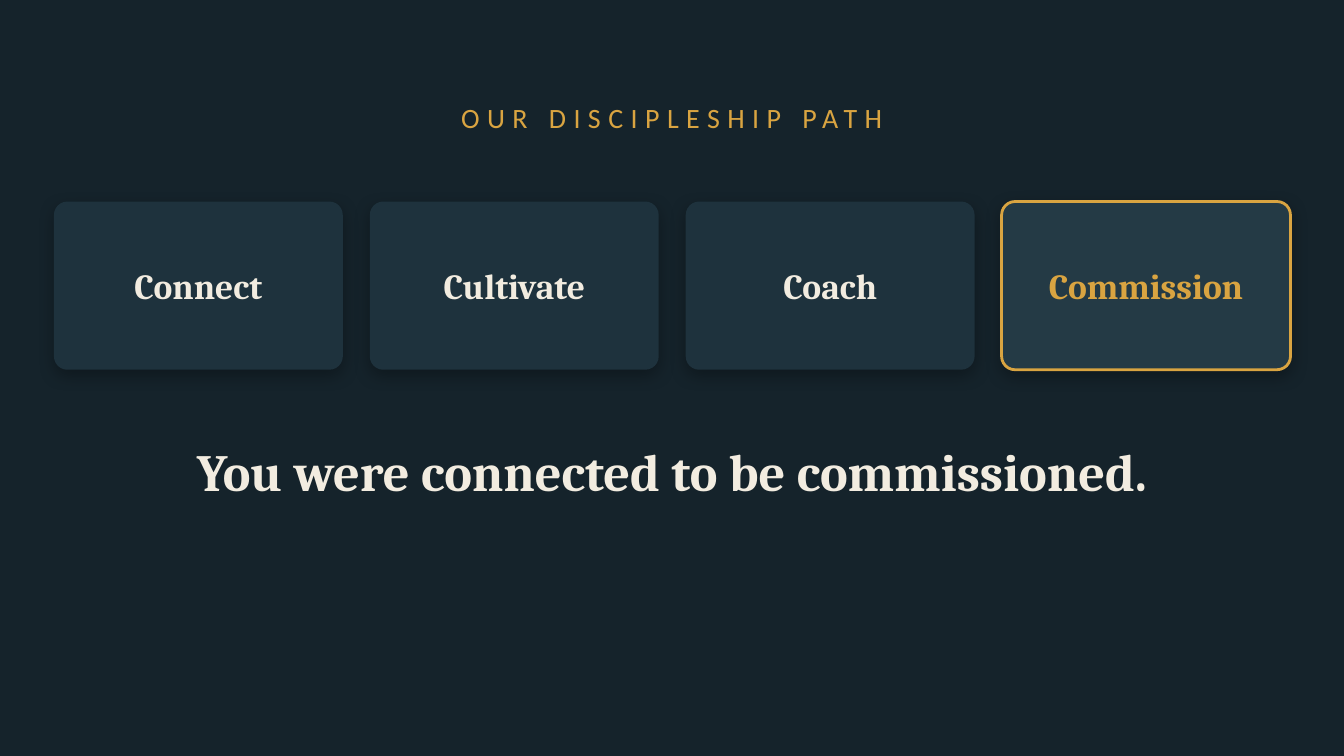
from dataclasses import dataclass

from lxml import etree
from pptx import Presentation
from pptx import util as u
from pptx.dml.color import RGBColor
from pptx.enum import shapes, text
from pptx.oxml import ns

COLOURS = {
    "night": "15232B",
    "card": "1E323D",
    "highlight": "243A45",
    "gold": "D9A441",
    "cream": "F2ECE0",
    "shadow": "000000",
}
CARD_LEFT, CARD_TOP = 1.02, 3.81
CARD_WIDTH, CARD_HEIGHT = 5.46, 3.18
CARD_GAP = 0.51


@dataclass(frozen=True)
class Style:
    font: str
    size: float
    colour: str
    bold: bool = False
    spacing: float = 0


@dataclass(frozen=True)
class Caption:
    wording: str
    left: float
    top: float
    width: float
    height: float
    style: Style


@dataclass(frozen=True)
class Step:
    name: str
    fill: str = "card"
    colour: str = "cream"
    outline: str | None = None


CAPTIONS = [
    Caption("OUR DISCIPLESHIP PATH", 1.27, 1.65, 22.86, 1.14,
            Style("Calibri", 15, "gold", spacing=4)),
    Caption("You were connected to be commissioned.", 2.03, 8, 21.34, 1.78,
            Style("Cambria", 28, "cream", bold=True)),
]
STEPS = [
    Step("Connect"),
    Step("Cultivate"),
    Step("Coach"),
    Step("Commission", "highlight", "gold", "gold"),
]


def colour(name: str) -> RGBColor:
    return RGBColor.from_string(COLOURS[name])


def write(box, wording: str, style: Style) -> None:
    frame = box.text_frame
    frame.word_wrap = True
    frame.vertical_anchor = text.MSO_ANCHOR.MIDDLE
    para = frame.paragraphs[0]
    para.alignment = text.PP_ALIGN.CENTER
    span = para.add_run()
    span.text = wording
    span.font.name = style.font
    span.font.size = u.Pt(style.size)
    span.font.bold = style.bold
    span.font.color.rgb = colour(style.colour)
    if style.spacing:
        span.font._element.set("spc", str(int(style.spacing * 100)))


def cast_shadow(shape) -> None:
    shape.shadow.inherit = False
    effects = shape._element.spPr.find(ns.qn("a:effectLst"))
    shadow = etree.SubElement(
        effects, ns.qn("a:outerShdw"), blurRad=str(u.Pt(9)), dist=str(u.Pt(3)),
        dir="5400000", algn="bl", rotWithShape="0")
    tint = etree.SubElement(shadow, ns.qn("a:srgbClr"), val=COLOURS["shadow"])
    etree.SubElement(tint, ns.qn("a:alpha"), val="30000")


def add_caption(page, caption: Caption) -> None:
    box = page.shapes.add_textbox(
        u.Cm(caption.left), u.Cm(caption.top), u.Cm(caption.width), u.Cm(caption.height))
    write(box, caption.wording, caption.style)


def add_card(page, step: Step, index: int) -> None:
    left = CARD_LEFT + index * (CARD_WIDTH + CARD_GAP)
    card = page.shapes.add_shape(
        shapes.MSO_SHAPE.ROUNDED_RECTANGLE,
        u.Cm(left), u.Cm(CARD_TOP), u.Cm(CARD_WIDTH), u.Cm(CARD_HEIGHT))
    card.adjustments[0] = 0.08
    card.fill.solid()
    card.fill.fore_color.rgb = colour(step.fill)
    if step.outline:
        card.line.color.rgb = colour(step.outline)
        card.line.width = u.Pt(1.5)
    else:
        card.line.fill.background()
    cast_shadow(card)
    write(card, step.name, Style("Cambria", 19, step.colour, bold=True))


def main() -> None:
    deck = Presentation()
    deck.slide_width, deck.slide_height = u.Cm(25.4), u.Cm(14.29)
    page = deck.slides.add_slide(deck.slide_layouts[6])
    page.background.fill.solid()
    page.background.fill.fore_color.rgb = colour("night")
    heading, closing = CAPTIONS
    add_caption(page, heading)
    for index, step in enumerate(STEPS):
        add_card(page, step, index)
    add_caption(page, closing)
    deck.save("out.pptx")


if __name__ == "__main__":
    main()
